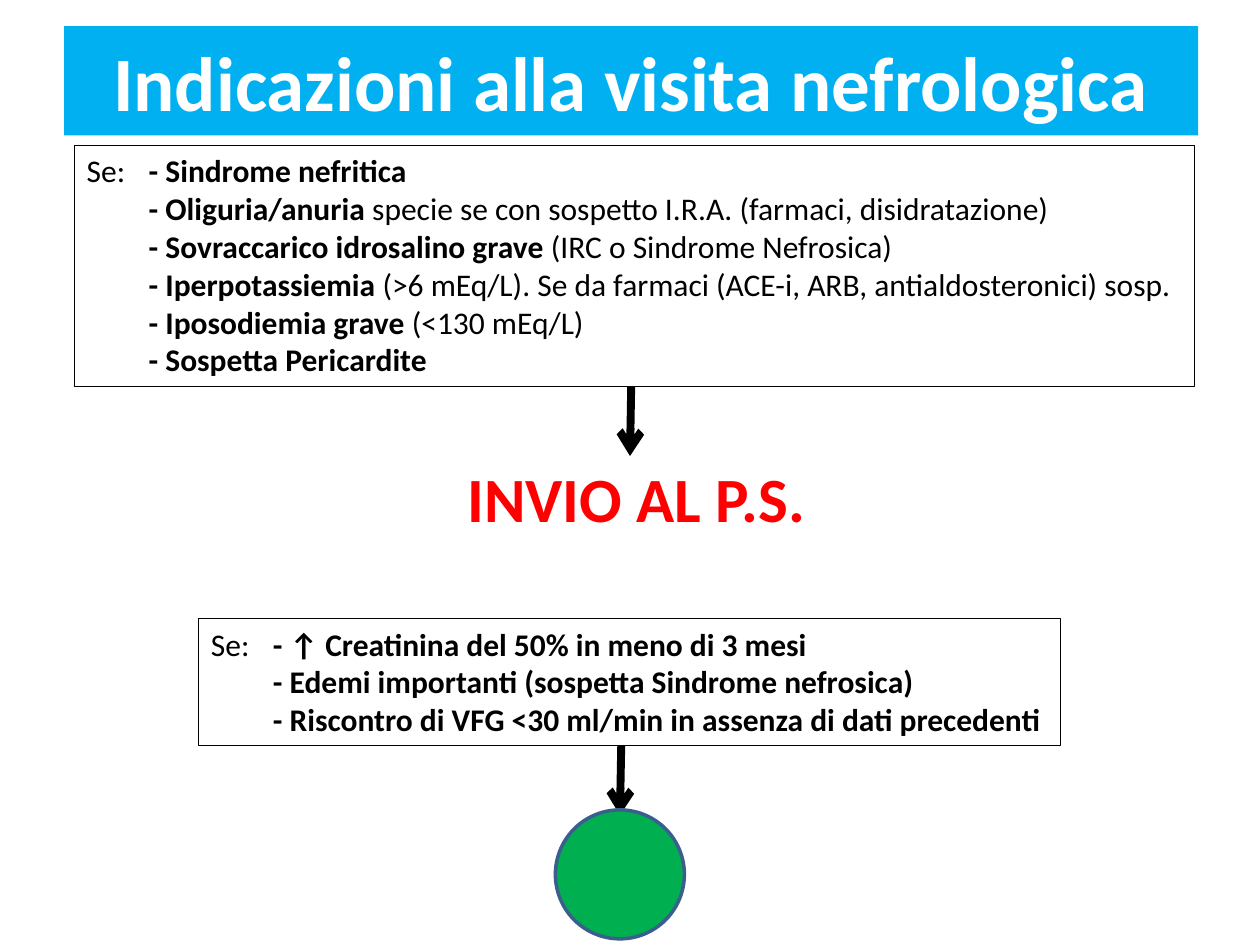
from lxml import etree
from pptx import Presentation
from pptx import util as u
from pptx.dml.color import RGBColor
from pptx.enum import shapes, text
from pptx.oxml import ns

WHITE = RGBColor(255, 255, 255)
BLACK = RGBColor(0, 0, 0)
RED = RGBColor(255, 0, 0)
SKY = RGBColor(0, 176, 240)
GREEN = RGBColor(0, 176, 80)
STEEL = RGBColor(58, 95, 140)

URGENT = [
    ("- Sindrome nefritica", ""),
    ("- Oliguria/anuria ", "specie se con sospetto I.R.A. (farmaci, disidratazione)"),
    ("- Sovraccarico idrosalino grave", " (IRC o Sindrome Nefrosica)"),
    ("- Iperpotassiemia", " (>6 mEq/L). Se da farmaci (ACE-i, ARB, antialdosteronici) sosp."),
    ("- Iposodiemia grave", " (<130 mEq/L)"),
    ("- Sospetta Pericardite", ""),
]
PRIORITY = [
    ("- ↑ Creatinina del 50% in meno di 3 mesi", ""),
    ("- Edemi importanti (sospetta Sindrome nefrosica)", ""),
    ("- Riscontro di VFG <30 ml/min in assenza di dati precedenti", ""),
]


class Deck:
    font = "Calibri"
    tab = u.Pt(35.4)

    def __init__(self, width, height):
        self.prs = Presentation()
        self.prs.slide_width, self.prs.slide_height = u.Pt(width), u.Pt(height)
        self.s = self.prs.slides.add_slide(self.prs.slide_layouts[5])

    def run(self, p, words, size, color, bold):
        r = p.add_run()
        r.text = words
        style = {"name": self.font, "size": u.Pt(size), "bold": bold}
        for key, value in style.items():
            setattr(r.font, key, value)
        r.font.color.rgb = color

    def title(self, words, *box):
        sp = self.s.shapes.title
        for key, value in zip(("left", "top", "width", "height"), box):
            setattr(sp, key, u.Pt(value))
        sp.fill.solid()
        sp.fill.fore_color.rgb = SKY
        tf = sp.text_frame
        tf.auto_size = text.MSO_AUTO_SIZE.NONE
        tf.vertical_anchor = text.MSO_ANCHOR.MIDDLE
        p = tf.paragraphs[0]
        p.alignment = text.PP_ALIGN.CENTER
        self.run(p, words, 44, WHITE, True)

    def shape(self, kind, box, line, weight, fill=None):
        sp = self.s.shapes.add_shape(kind, *map(u.Pt, box))
        sp.shadow.inherit = False
        if fill is None:
            sp.fill.background()
        else:
            sp.fill.solid()
            sp.fill.fore_color.rgb = fill
        sp.line.color.rgb = line
        sp.line.width = u.Pt(weight)
        return sp

    def criteria(self, items, *box):
        tf = self.shape(shapes.MSO_SHAPE.RECTANGLE, box, BLACK, 0.75).text_frame
        tf.word_wrap = True
        tf.vertical_anchor = text.MSO_ANCHOR.TOP
        for i, (sign, detail) in enumerate(items):
            p = tf.add_paragraph() if i else tf.paragraphs[0]
            p.alignment = text.PP_ALIGN.LEFT
            tabs = etree.SubElement(p._p.get_or_add_pPr(), ns.qn("a:tabLst"))
            etree.SubElement(tabs, ns.qn("a:tab"), pos=str(self.tab), algn="l")
            self.run(p, "\t" if i else "Se:\t", 18, BLACK, False)
            self.run(p, sign, 18, BLACK, True)
            if detail:
                self.run(p, detail, 18, BLACK, False)

    def label(self, words, *box):
        tf = self.s.shapes.add_textbox(*map(u.Pt, box)).text_frame
        tf.word_wrap = True
        self.run(tf.paragraphs[0], words, 36, RED, True)

    def arrow(self, *ends):
        c = self.s.shapes.add_connector(shapes.MSO_CONNECTOR.STRAIGHT, *map(u.Pt, ends))
        c.line.color.rgb = BLACK
        c.line.width = u.Pt(4.5)
        etree.SubElement(c.line._get_or_add_ln(), ns.qn("a:tailEnd"), type="arrow")
        etree.SubElement(c._element.spPr, ns.qn("a:effectLst"))

    def light(self, left, top, size):
        self.shape(shapes.MSO_SHAPE.OVAL, (left, top, size, size), STEEL, 2, GREEN)


def main():
    deck = Deck(720, 540)
    deck.title("Indicazioni alla visita nefrologica", 36.7, 15, 648, 62.4)
    deck.criteria(URGENT, 42.5, 83, 640, 138)
    deck.arrow(360.7, 221, 360, 260.6)
    deck.label("INVIO AL P.S.", 260, 259.2, 209.5, 51)
    deck.criteria(PRIORITY, 113.5, 353.4, 492.5, 72.7)
    deck.arrow(355, 426.1, 354.3, 465.8)
    deck.light(317.4, 462.8, 73.7)
    deck.prs.save("out.pptx")


if __name__ == "__main__":
    main()
